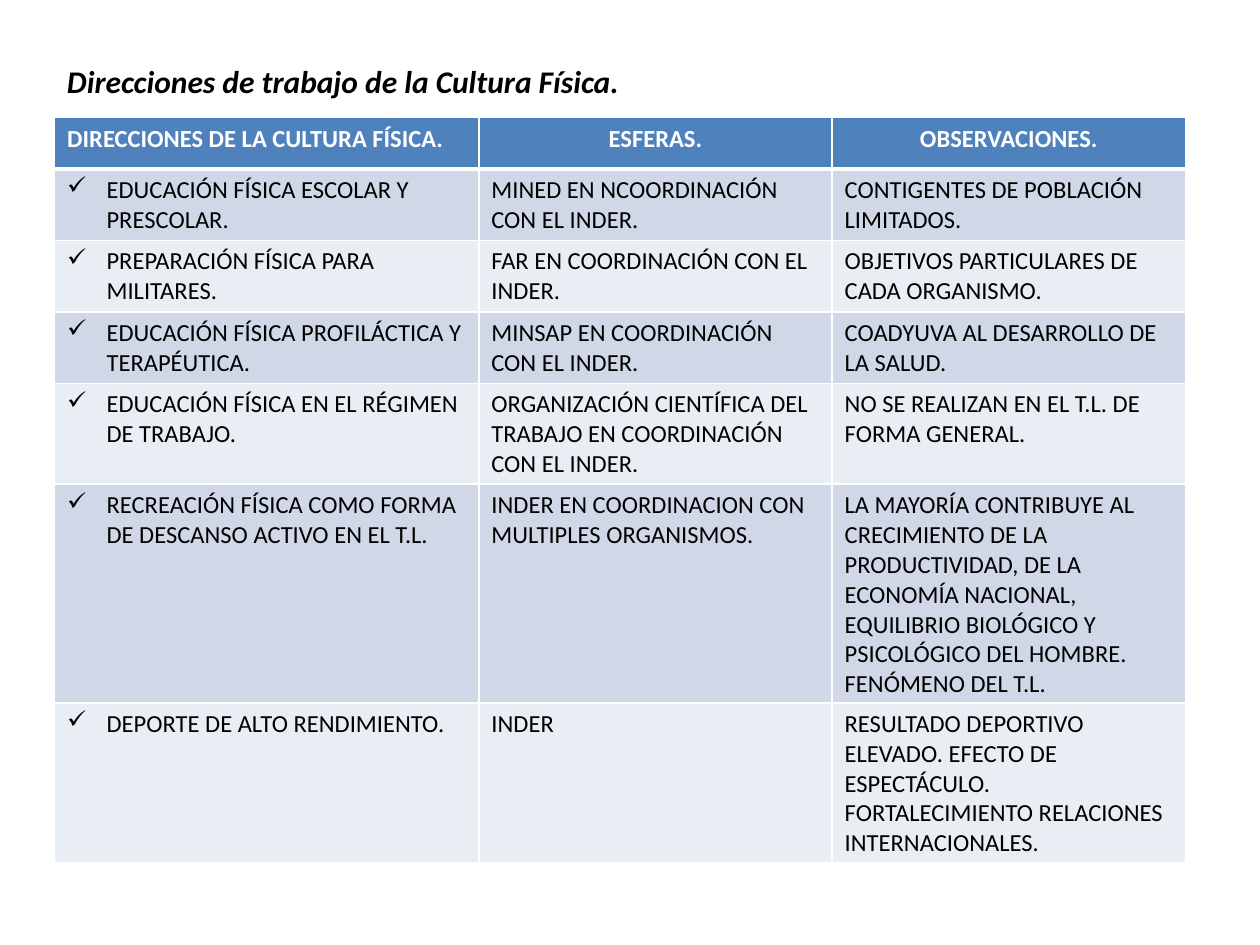
import pptx
import pptx.dml.color
import pptx.enum.text
import pptx.oxml
import pptx.oxml.ns
import pptx.util

Pt = pptx.util.Pt
RGB = pptx.dml.color.RGBColor
ALIGN = pptx.enum.text.PP_ALIGN
NS = pptx.oxml.ns.nsdecls("a")

BLACK = RGB(0x00, 0x00, 0x00)
WHITE = RGB(0xFF, 0xFF, 0xFF)
BLUE = RGB(0x4F, 0x81, 0xBD)
BANDS = RGB(0xD0, 0xD8, 0xE8), RGB(0xE9, 0xED, 0xF4)

TITLE = "Direcciones de trabajo de la Cultura Física."
HEADS = "DIRECCIONES DE LA CULTURA FÍSICA.", "ESFERAS.", "OBSERVACIONES."
ROWS = [
    ("EDUCACIÓN FÍSICA ESCOLAR Y PRESCOLAR.",
     "MINED EN NCOORDINACIÓN CON EL INDER.",
     "CONTIGENTES DE POBLACIÓN LIMITADOS."),
    ("PREPARACIÓN FÍSICA PARA MILITARES.",
     "FAR EN COORDINACIÓN CON EL INDER.",
     "OBJETIVOS PARTICULARES DE CADA ORGANISMO."),
    ("EDUCACIÓN FÍSICA PROFILÁCTICA Y TERAPÉUTICA.",
     "MINSAP EN COORDINACIÓN CON EL INDER.",
     "COADYUVA AL DESARROLLO DE LA SALUD."),
    ("EDUCACIÓN FÍSICA EN EL RÉGIMEN DE TRABAJO.",
     "ORGANIZACIÓN CIENTÍFICA DEL TRABAJO EN COORDINACIÓN CON EL INDER.",
     "NO SE REALIZAN EN EL T.L. DE FORMA GENERAL."),
    ("RECREACIÓN FÍSICA COMO FORMA DE DESCANSO ACTIVO EN EL T.L.",
     "INDER EN COORDINACION CON MULTIPLES ORGANISMOS.",
     "LA MAYORÍA CONTRIBUYE AL CRECIMIENTO DE LA PRODUCTIVIDAD, DE LA "
     "ECONOMÍA NACIONAL, EQUILIBRIO BIOLÓGICO Y PSICOLÓGICO DEL HOMBRE. "
     "FENÓMENO DEL T.L."),
    ("DEPORTE DE ALTO RENDIMIENTO.",
     "INDER",
     "RESULTADO DEPORTIVO ELEVADO. EFECTO DE ESPECTÁCULO. "
     "FORTALECIMIENTO RELACIONES INTERNACIONALES."),
]
WIDTHS = 242.4, 201.9, 201.9
LEFT = 31.2
ROW_H = 29.3


class Page:
    def __init__(self, slide, font="Calibri"):
        self.slide = slide
        self.font = font

    def style(self, para, size, color, bold, italic=False):
        for run in para.runs:
            font = run.font
            font.name, font.size = self.font, Pt(size)
            font.bold, font.italic = bold, italic
            font.color.rgb = color

    def title(self, text, left, top, width, height):
        box = self.slide.shapes.add_textbox(
            Pt(left), Pt(top), Pt(width), Pt(height))
        frame = box.text_frame
        frame.word_wrap = True
        frame.text = text
        self.style(frame.paragraphs[0], 18, BLACK, True, True)

    def border(self, cell, top, bottom):
        """Rule all four sides in white; top and bottom are line widths."""
        props = cell._tc.get_or_add_tcPr()
        sides = ("L", 1), ("R", 1), ("T", top), ("B", bottom)
        for spot, (side, width) in enumerate(sides):
            props.insert(spot, pptx.oxml.parse_xml(
                f'<a:ln{side} {NS} w="{Pt(width)}"><a:solidFill>'
                f'<a:srgbClr val="{WHITE}"/></a:solidFill></a:ln{side}>'))

    def check(self, para, indent):
        """Put a hanging check mark before the paragraph."""
        props = para._p.get_or_add_pPr()
        props.set("marL", str(Pt(indent)))
        props.set("indent", str(-Pt(indent)))
        props.append(pptx.oxml.parse_xml(f'<a:buChar {NS} char="✓"/>'))

    def cell(self, cell, text, row, col):
        head = row == 0
        cell.fill.solid()
        cell.fill.fore_color.rgb = BLUE if head else BANDS[(row - 1) % 2]
        self.border(cell, 3 if row == 1 else 1, 3 if head else 1)
        cell.text_frame.text = text
        para = cell.text_frame.paragraphs[0]
        self.style(para, 14, WHITE if head else BLACK, head)
        if head and col:
            para.alignment = ALIGN.CENTER
        elif not head and not col:
            self.check(para, 22.5)

    def table(self, rows, widths, left, top, height):
        shape = self.slide.shapes.add_table(
            len(rows), len(widths), Pt(left), Pt(top),
            Pt(sum(widths)), Pt(height))
        table = shape.table
        for column, width in zip(table.columns, widths):
            column.width = Pt(width)
        for r, texts in enumerate(rows):
            table.rows[r].height = Pt(ROW_H)
            for c, text in enumerate(texts):
                self.cell(table.cell(r, c), text, r, c)
        shape.height = Pt(height)


def main():
    deck = pptx.Presentation()
    deck.slide_width, deck.slide_height = Pt(720), Pt(540)
    page = Page(deck.slides.add_slide(deck.slide_layouts[6]))
    page.title(TITLE, LEFT, 31.6, 657, 72.7)
    page.table([HEADS, *ROWS], WIDTHS, LEFT, 67.2, 425.5)
    deck.save("out.pptx")


if __name__ == "__main__":
    main()
